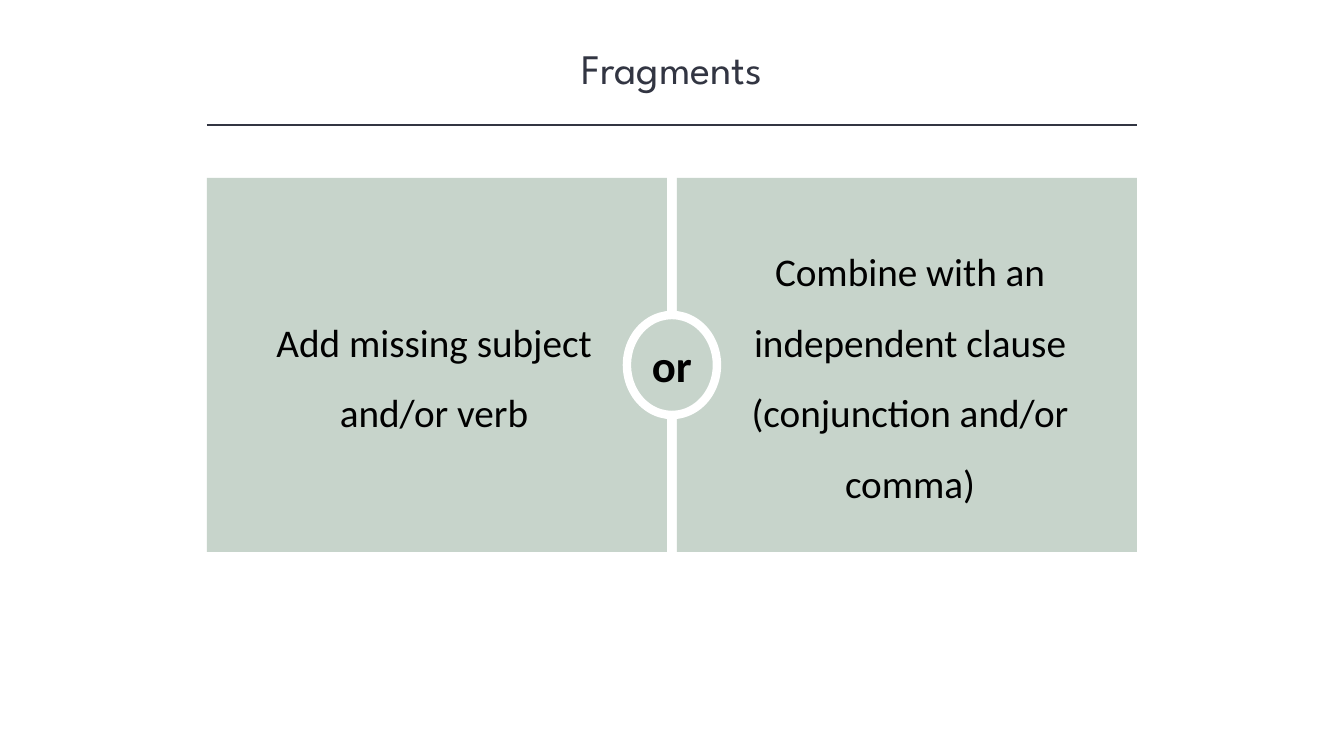
import pptx
import pptx.util
import pptx.dml.color
import pptx.enum.shapes
import pptx.enum.text
import pptx.oxml.ns
import lxml.etree

RGB = pptx.dml.color.RGBColor
SHAPE = pptx.enum.shapes.MSO_SHAPE
SLATE = RGB(0x32, 0x35, 0x42)
SAGE = RGB(0xC7, 0xD4, 0xCB)
WHITE = RGB(0xFF, 0xFF, 0xFF)
BLACK = RGB(0x00, 0x00, 0x00)


def px(*lengths):
    """Turn px (100.8 to the inch) into EMU."""
    return [round(n * 914400 / 100.8) for n in lengths]


def write(sp, text, size, font="Calibri", color=BLACK, bold=False, spacing=1.0, wrap=True):
    tf = sp.text_frame
    tf.word_wrap = wrap
    tf.auto_size = pptx.enum.text.MSO_AUTO_SIZE.NONE
    tf.vertical_anchor = pptx.enum.text.MSO_ANCHOR.MIDDLE
    p = tf.paragraphs[0]
    p.alignment = pptx.enum.text.PP_ALIGN.CENTER
    p.line_spacing = spacing
    r = p.add_run()
    r.text = text
    r.font.size = pptx.util.Pt(size)
    r.font.name = font
    r.font.bold = bold
    r.font.color.rgb = color


prs = pptx.Presentation()
prs.slide_width, prs.slide_height = px(1344, 756)
s = prs.slides.add_slide(prs.slide_layouts[5])

# Title
title = s.shapes.title
title.left, title.top, title.width, title.height = px(168, 37, 1008, 62)
write(title, "Fragments", 30, font="League Spartan", color=SLATE)

# Divider
divider = s.shapes.add_connector(
    pptx.enum.shapes.MSO_CONNECTOR.STRAIGHT, *px(207, 125, 1137, 125))
divider.line.color.rgb = SLATE
divider.line.width = pptx.util.Pt(1)
lxml.etree.SubElement(divider._element.spPr, pptx.oxml.ns.qn("a:effectLst"))

# Two panels, 10 px apart
for left in (207, 677):
    panel = s.shapes.add_shape(SHAPE.RECTANGLE, *px(left, 178, 460, 374))
    panel.shadow.inherit = False
    panel.fill.solid()
    panel.fill.fore_color.rgb = SAGE
    panel.line.fill.background()

# Badge between the panels
badge = s.shapes.add_shape(SHAPE.OVAL, *px(627, 315, 90, 100))
badge.shadow.inherit = False
badge.fill.solid()
badge.fill.fore_color.rgb = SAGE
badge.line.color.rgb = WHITE
badge.line.width = pptx.util.Pt(6)
write(badge, "or", 32, bold=True, wrap=False)

# Panel texts, centred on the same height
for left, height, text in (
    (251, 145, "Add missing subject and/or verb"),
    (727, 288, "Combine with an independent clause (conjunction and/or comma)"),
):
    box = s.shapes.add_textbox(*px(left, 365 - height / 2, 366, height))
    write(box, text, 28, spacing=1.5)

prs.save("out.pptx")
